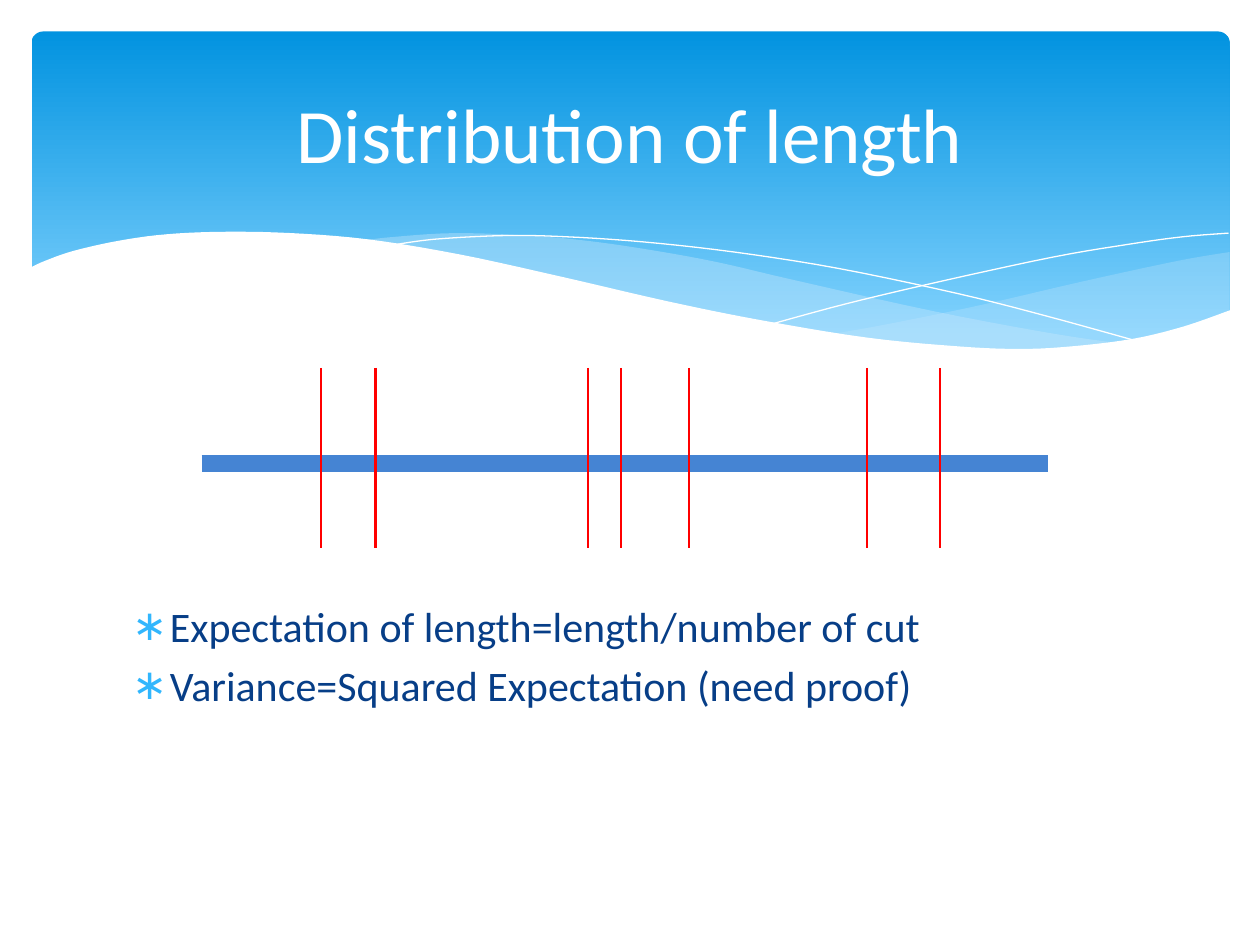
from lxml import etree
from pptx import Presentation
from pptx import util as u
from pptx.dml.color import RGBColor
from pptx.enum import shapes as sh, text as tx
from pptx.oxml.ns import qn

CUTS = [2.55, 4.67, 2.98, 4.93, 6.88, 7.46, 5.47]
FACTS = ["Expectation of length=length/number of cut",
         "Variance=Squared Expectation (need proof)"]

RIGHT_TOP = [(9.76, 2), (9.35, 2.07), (8.61, 2.23), (7.79, 2.42),
             (7.06, 2.57), (6.61, 2.65)]
RIGHT_LOW = [(6.61, 2.65), (7.05, 2.71), (7.57, 2.76), (8.14, 2.78),
             (8.63, 2.75), (9.05, 2.69), (9.42, 2.59), (9.76, 2.47)]
MID_TOP = [(8.93, 2.73), (8.37, 2.65), (7.41, 2.47), (6.29, 2.22),
           (5.69, 2.08), (5.14, 1.98), (4.65, 1.91), (4.2, 1.87),
           (3.61, 1.85), (3.13, 1.88), (2.86, 1.91)]
MID_LOW = [(2.86, 1.91), (3.42, 1.99), (4.04, 2.11), (4.91, 2.32),
           (5.66, 2.48), (6.34, 2.61), (6.95, 2.7), (7.48, 2.76),
           (8.07, 2.78), (8.57, 2.77), (8.93, 2.73)]
FALL = [(3.09, 1.95), (3.44, 1.9), (4.01, 1.87), (4.5, 1.88), (5.1, 1.92),
        (5.82, 2), (6.65, 2.13), (7.6, 2.33), (8.31, 2.51), (9.07, 2.72)]
RISE = [(6.13, 2.57), (6.72, 2.41), (7.48, 2.23), (8.36, 2.04),
        (8.95, 1.94), (9.38, 1.88), (9.75, 1.85)]
EDGE = [(9.77, 2.46), (9.4, 2.59), (8.99, 2.69), (8.5, 2.75), (8.09, 2.77),
        (7.61, 2.75), (6.88, 2.68), (6.03, 2.54), (5.29, 2.39), (4.47, 2.2),
        (3.65, 2.02), (2.92, 1.9), (2.3, 1.85), (1.77, 1.84), (1.32, 1.86),
        (0.95, 1.91), (0.59, 1.99), (0.36, 2.07), (0.23, 2.13)]
BASE = [(0.23, 3.29), (9.77, 3.29)]


def color(code):
    return RGBColor.from_string(code)


def curve(knots, steps=5):
    """Points of a Catmull-Rom curve through the knots."""
    ends = [knots[0], *knots, knots[-1]]
    out = [knots[0]]
    for a, b, c, d in zip(ends, ends[1:], ends[2:], ends[3:]):
        for i in range(1, steps + 1):
            t = i / steps
            out.append(tuple(
                (2 * q + (r - p) * t + (2 * p - 5 * q + 4 * r - s) * t ** 2
                 + (3 * q - p - 3 * r + s) * t ** 3) / 2
                for p, q, r, s in zip(a, b, c, d)))
    return out


def trace(slide, points, close):
    spots = [(u.Inches(x), u.Inches(y)) for x, y in points]
    pen = slide.shapes.build_freeform(*spots[0])
    pen.add_line_segments(spots[1:], close=close)
    shape = pen.convert_to_shape()
    shape.shadow.inherit = False
    return shape


def add_wave(slide, points, code, alpha=100):
    wave = trace(slide, points, True)
    wave.line.fill.background()
    wave.fill.solid()
    wave.fill.fore_color.rgb = color(code)
    if alpha < 100:
        tone = wave.element.spPr.find(".//" + qn("a:srgbClr"))
        etree.SubElement(tone, qn("a:alpha"), val=str(alpha * 1000))


def add_thread(slide, points):
    thread = trace(slide, points, False)
    thread.fill.background()
    thread.line.color.rgb = color("FFFFFF")
    thread.line.width = u.Pt(0)


def add_panel(slide):
    panel = slide.shapes.add_shape(
        sh.MSO_SHAPE.ROUNDED_RECTANGLE, u.Inches(0.25), u.Inches(0.25),
        u.Inches(9.51), u.Inches(2.7))
    panel.adjustments[0] = 0.034
    panel.shadow.inherit = False
    panel.line.fill.background()
    panel.fill.gradient()
    panel.fill.gradient_angle = 270
    stops = [(0, "0293E0"), (0.9, "83D3FE")]
    for stop, (place, code) in zip(panel.fill.gradient_stops, stops):
        stop.position = place
        stop.color.rgb = color(code)


def add_line(slide, start, end, code, width):
    line = slide.shapes.add_connector(
        sh.MSO_CONNECTOR.STRAIGHT, *map(u.Inches, start + end))
    line.line.color.rgb = color(code)
    line.line.width = u.Pt(width)
    etree.SubElement(line.element.spPr, qn("a:effectLst"))


def add_run(para, words, size, code):
    run = para.add_run()
    run.text = words
    run.font.name = "Calibri"
    run.font.size = u.Pt(size)
    run.font.color.rgb = color(code)


def add_bullet(para):
    props = para._p.get_or_add_pPr()
    props.set("marL", str(u.Inches(0.3)))
    props.set("indent", str(-u.Inches(0.3)))
    tint = etree.SubElement(props, qn("a:buClr"))
    etree.SubElement(tint, qn("a:srgbClr"), val="31B6FD")
    etree.SubElement(props, qn("a:buFont"), typeface="Calibri")
    etree.SubElement(props, qn("a:buChar"), char="∗")


def add_facts(slide):
    box = slide.shapes.add_textbox(
        u.Inches(0.95), u.Inches(4.72), u.Inches(8.1), u.Inches(1.98))
    frame = box.text_frame
    frame.word_wrap = True
    for i, fact in enumerate(FACTS):
        para = frame.add_paragraph() if i else frame.paragraphs[0]
        para.space_before = u.Pt(4.8)
        add_bullet(para)
        add_run(para, fact, 24, "073E87")


def set_title(slide, words):
    title = slide.shapes.title
    title.left, title.top = u.Inches(0.5), u.Inches(0.37)
    title.width, title.height = u.Inches(9), u.Inches(1.37)
    title.text_frame.vertical_anchor = tx.MSO_ANCHOR.MIDDLE
    para = title.text_frame.paragraphs[0]
    para.alignment = tx.PP_ALIGN.CENTER
    add_run(para, words, 44, "FFFFFF")
    # Bring the title in front of the header panel
    title.element.getparent().append(title.element)


def main():
    deck = Presentation()
    deck.slide_width, deck.slide_height = u.Inches(10), u.Inches(7.5)
    slide = deck.slides.add_slide(deck.slide_layouts[5])
    add_panel(slide)
    add_wave(slide, curve(RIGHT_TOP) + curve(RIGHT_LOW), "C6E7FC", 29)
    add_wave(slide, curve(MID_TOP) + curve(MID_LOW), "C6E7FC", 40)
    add_thread(slide, curve(FALL))
    add_thread(slide, curve(RISE))
    add_wave(slide, curve(EDGE) + BASE, "FFFFFF")
    add_facts(slide)
    set_title(slide, "Distribution of length")
    add_line(slide, (1.6, 3.68), (8.32, 3.68), "4584D3", 10)
    for x in CUTS:
        add_line(slide, (x, 2.92), (x, 4.35), "FF0000", 1.25)
    deck.save("out.pptx")


if __name__ == "__main__":
    main()
